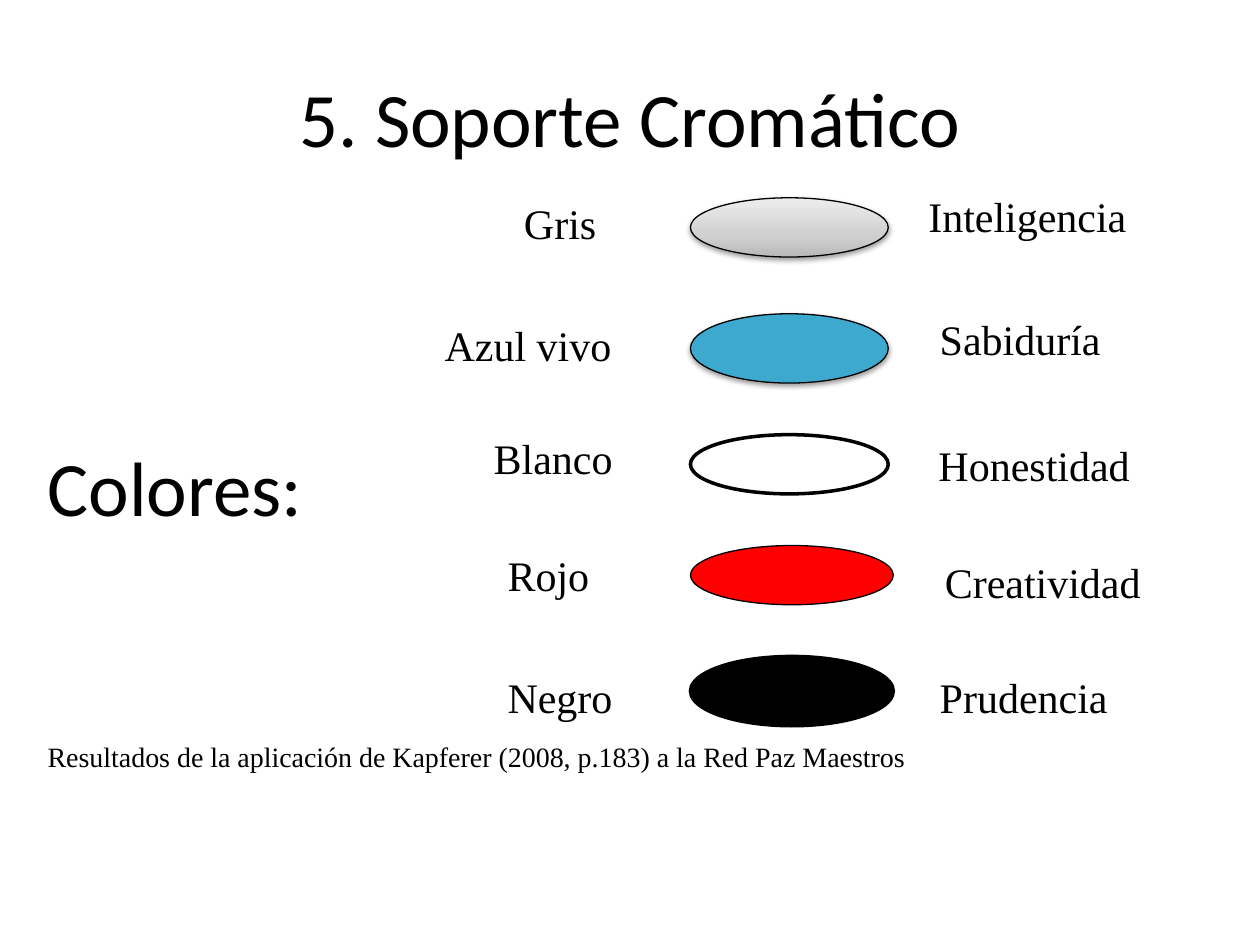
from dataclasses import dataclass
import copy

import lxml.etree
import pptx
import pptx.dml.color
import pptx.enum.shapes
import pptx.enum.text
import pptx.oxml.ns
import pptx.util

COLUMNS, ROWS = 100, 75
CELL = pptx.util.Inches(0.1)
COLORS = {
    "black": "000000",
    "white": "FFFFFF",
    "blue": "3DA9CF",
    "red": "FF0000",
    "dark gray": "BABABA",
    "middle gray": "CFCFCF",
    "light gray": "EDEDED",
}
GRAY_STOPS = [(0, "dark gray"), (0.35, "middle gray"), (1, "light gray")]
HEADING_FONT, BODY_FONT = "Calibri", "Times New Roman"
LABEL_HEIGHT = 5
OVAL_LEFT = 54.8


@dataclass
class Box:
    """A place on the grid, in columns and rows."""
    left: float
    top: float
    width: float
    height: float

    def lengths(self) -> list[int]:
        return [round(cells * CELL) for cells in (self.left, self.top, self.width, self.height)]


@dataclass
class Label:
    text: str
    left: float
    top: float
    width: float


@dataclass
class Oval:
    top: float
    width: float
    height: float
    fill: str
    line_width: float = 0.75
    shadow: bool = False


@dataclass
class ColorMeaning:
    name: Label
    oval: Oval
    meaning: Label


MEANINGS = [
    ColorMeaning(Label("Gris", 40.6, 15.2, 18.9),
                 Oval(15.7, 15.7, 4.7, "gradient", shadow=True),
                 Label("Inteligencia", 72.7, 14.6, 18.3)),
    ColorMeaning(Label("Azul vivo", 34.3, 24.9, 20.5),
                 Oval(24.9, 15.7, 5.5, "blue", shadow=True),
                 Label("Sabiduría", 73.6, 24.4, 17.4)),
    ColorMeaning(Label("Blanco", 38.2, 33.8, 12.7),
                 Oval(34.5, 15.7, 4.7, "white", line_width=2),
                 Label("Honestidad", 73.5, 34.4, 17.4)),
    ColorMeaning(Label("Rojo", 39.3, 43.1, 11.8),
                 Oval(43.3, 16.1, 4.7, "red"),
                 Label("Creatividad", 74, 43.7, 18.1)),
    ColorMeaning(Label("Negro", 39.3, 52.8, 15.7),
                 Oval(52.1, 16.1, 5.5, "black", line_width=2),
                 Label("Prudencia", 73.6, 52.8, 15.8)),
]


def rgb(name: str) -> pptx.dml.color.RGBColor:
    return pptx.dml.color.RGBColor.from_string(COLORS[name])


def add_text(slide, text: str, box: Box, size: float, font: str, centered: bool = False) -> None:
    frame = slide.shapes.add_textbox(*box.lengths()).text_frame
    frame.word_wrap = True
    paragraph = frame.paragraphs[0]
    if centered:
        frame.vertical_anchor = pptx.enum.text.MSO_ANCHOR.MIDDLE
        paragraph.alignment = pptx.enum.text.PP_ALIGN.CENTER
    else:
        frame.auto_size = pptx.enum.text.MSO_AUTO_SIZE.SHAPE_TO_FIT_TEXT
    run = paragraph.add_run()
    run.text = text
    run.font.size = pptx.util.Pt(size)
    run.font.name = font
    run.font.color.rgb = rgb("black")


def add_label(slide, label: Label) -> None:
    add_text(slide, label.text, Box(label.left, label.top, label.width, LABEL_HEIGHT), 24, BODY_FONT)


def fill_gray_gradient(shape) -> None:
    """Fade from dark at the bottom to light at the top."""
    shape.fill.gradient()
    shape.fill.gradient_angle = 90
    first = shape._element.spPr.find(".//" + pptx.oxml.ns.qn("a:gs"))
    first.addnext(copy.deepcopy(first))
    for stop, (position, color) in zip(shape.fill.gradient_stops, GRAY_STOPS):
        stop.position = position
        stop.color.rgb = rgb(color)


def add_shadow(shape) -> None:
    effects = shape._element.spPr.find(pptx.oxml.ns.qn("a:effectLst"))
    shadow = lxml.etree.SubElement(
        effects, pptx.oxml.ns.qn("a:outerShdw"),
        blurRad=str(pptx.util.Pt(3.1)), dist=str(pptx.util.Pt(1.6)),
        dir="5400000", rotWithShape="0")
    color = lxml.etree.SubElement(shadow, pptx.oxml.ns.qn("a:srgbClr"), val=COLORS["black"])
    lxml.etree.SubElement(color, pptx.oxml.ns.qn("a:alpha"), val="38000")


def add_oval(slide, oval: Oval) -> None:
    box = Box(OVAL_LEFT, oval.top, oval.width, oval.height)
    shape = slide.shapes.add_shape(pptx.enum.shapes.MSO_SHAPE.OVAL, *box.lengths())
    shape.shadow.inherit = False
    if oval.fill == "gradient":
        fill_gray_gradient(shape)
    else:
        shape.fill.solid()
        shape.fill.fore_color.rgb = rgb(oval.fill)
    shape.line.color.rgb = rgb("black")
    shape.line.width = pptx.util.Pt(oval.line_width)
    if oval.shadow:
        add_shadow(shape)


def main() -> None:
    presentation = pptx.Presentation()
    presentation.slide_width = COLUMNS * CELL
    presentation.slide_height = ROWS * CELL
    slide = presentation.slides.add_slide(presentation.slide_layouts[6])

    add_text(slide, "5. Soporte Cromático", Box(5, 3, 90, 12.5), 44, HEADING_FONT, centered=True)
    add_text(slide, "Colores:", Box(2.8, 34.4, 22.8, 8.4), 44, HEADING_FONT)
    for row in MEANINGS:
        add_label(slide, row.name)
        add_oval(slide, row.oval)
        add_label(slide, row.meaning)
    add_text(slide, "Resultados de la aplicación de Kapferer (2008, p.183) a la Red Paz Maestros",
             Box(2.8, 58.2, 74.8, 3.7), 16, BODY_FONT)

    presentation.save("out.pptx")


if __name__ == "__main__":
    main()
